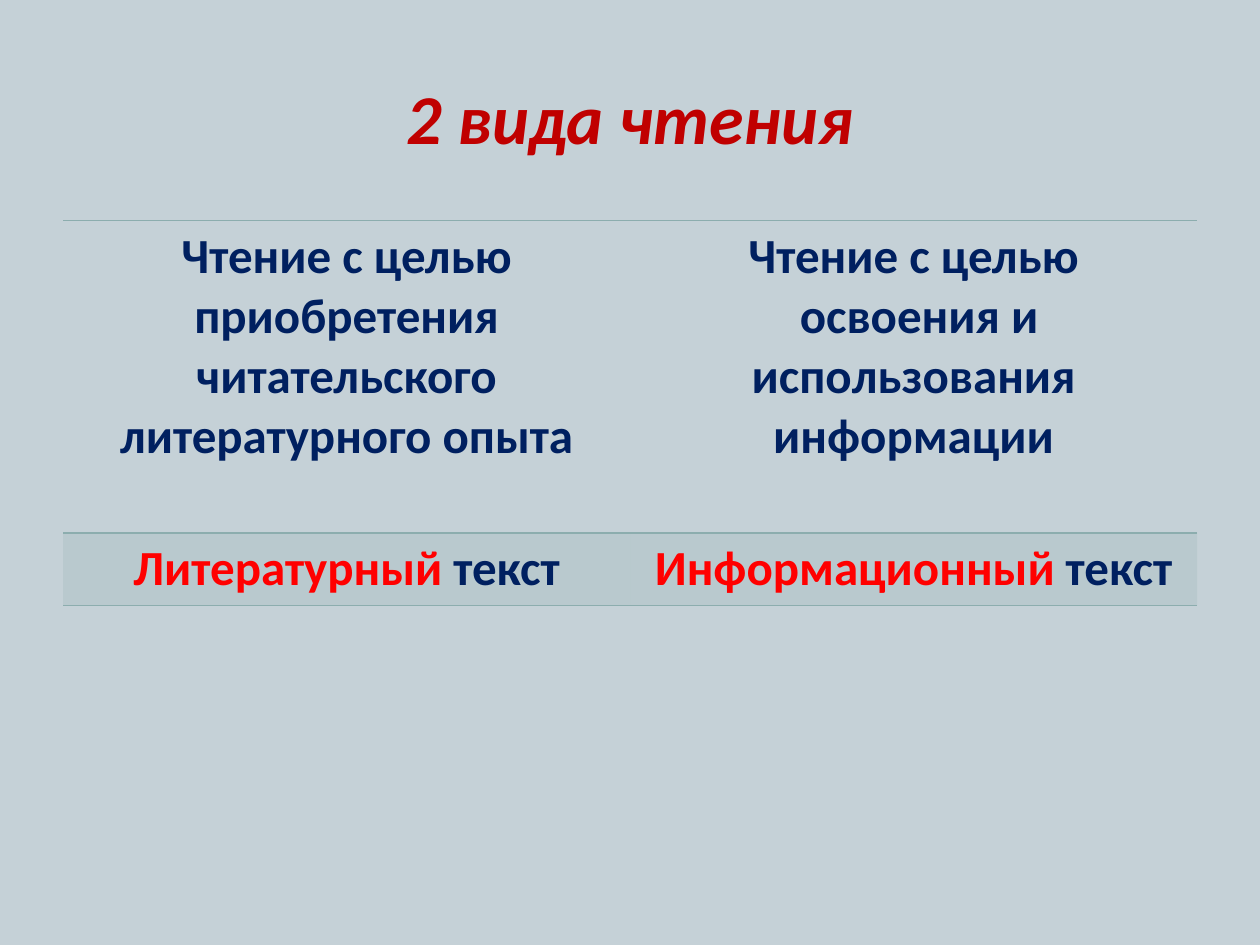
from dataclasses import dataclass

from lxml.etree import SubElement
from pptx import Presentation
from pptx.dml.color import RGBColor
from pptx.enum.text import MSO_ANCHOR, PP_ALIGN
from pptx.oxml.ns import qn
from pptx.util import Inches, Pt


@dataclass(frozen=True)
class Theme:
    font: str = "Calibri"
    background: str = "C5D1D7"
    title: str = "C00000"
    text: str = "002060"
    accent: str = "FF0000"
    rule: str = "8CADAE"
    title_size: int = 40
    table_size: int = 28
    band_opacity: int = 20
    rule_width: int = 1


THEME = Theme()
NO_TABLE_STYLE = "{2D5ABB26-0587-4C30-8999-92F81FD0307C}"

# Each cell is a list of paragraphs, each paragraph a list of (text, colour)
TABLE_ROWS = [
    [
        [[("Чтение с целью приобретения читательского литературного опыта", THEME.text)]],
        [[("Чтение с целью", THEME.text)],
         [(" освоения и использования информации", THEME.text)]],
    ],
    [
        [[("Литературный", THEME.accent), (" текст", THEME.text)]],
        [[("Информационный", THEME.accent), (" текст", THEME.text)]],
    ],
]
ROW_HEIGHTS = (2.48, 0.57)


def add_text(paragraph, text, *, size, color, bold=True, italic=False):
    paragraph.alignment = PP_ALIGN.CENTER
    run = paragraph.add_run()
    run.text = text
    font = run.font
    font.name = THEME.font
    font.size = Pt(size)
    font.bold = bold
    font.italic = italic
    font.color.rgb = RGBColor.from_string(color)


def add_title(slide, text):
    title = slide.shapes.title
    title.left, title.top = Inches(0.5), Inches(0.3)
    title.width, title.height = Inches(9), Inches(1.25)
    title.text_frame.vertical_anchor = MSO_ANCHOR.MIDDLE
    add_text(title.text_frame.paragraphs[0], text,
             size=THEME.title_size, color=THEME.title, italic=True)


def add_rule(cell, side):
    """Draw one border of a cell; side is lnT or lnB."""
    properties = cell._tc.get_or_add_tcPr()
    line = SubElement(properties, qn(f"a:{side}"), w=str(Pt(THEME.rule_width)))
    fill = SubElement(line, qn("a:solidFill"))
    SubElement(fill, qn("a:srgbClr"), val=THEME.rule)


def fill_band(cell):
    cell.fill.solid()
    cell.fill.fore_color.rgb = RGBColor.from_string(THEME.rule)
    color = cell._tc.tcPr.find(f"{qn('a:solidFill')}/{qn('a:srgbClr')}")
    SubElement(color, qn("a:alpha"), val=str(THEME.band_opacity * 1000))


def fill_cell(cell, paragraphs):
    frame = cell.text_frame
    for index, runs in enumerate(paragraphs):
        paragraph = frame.add_paragraph() if index else frame.paragraphs[0]
        for text, color in runs:
            add_text(paragraph, text, size=THEME.table_size, color=color)


def add_reading_table(slide):
    shape = slide.shapes.add_table(
        len(TABLE_ROWS), len(TABLE_ROWS[0]), Inches(0.5), Inches(1.75),
        Inches(9), Inches(sum(ROW_HEIGHTS)))
    table = shape.table
    table.first_row = table.horz_banding = False
    table._tbl.tblPr.find(qn("a:tableStyleId")).text = NO_TABLE_STYLE

    for row_index, (row, height) in enumerate(zip(TABLE_ROWS, ROW_HEIGHTS)):
        table.rows[row_index].height = Inches(height)
        for column_index, paragraphs in enumerate(row):
            cell = table.cell(row_index, column_index)
            fill_cell(cell, paragraphs)
            # Borders precede the fill in the cell properties
            add_rule(cell, "lnT")
            add_rule(cell, "lnB")
            if row_index:
                fill_band(cell)
            else:
                cell.fill.background()


def main():
    presentation = Presentation()
    presentation.slide_width, presentation.slide_height = Inches(10), Inches(7.5)
    slide = presentation.slides.add_slide(presentation.slide_layouts.get_by_name("Title Only"))

    # Background
    background = slide.background.fill
    background.solid()
    background.fore_color.rgb = RGBColor.from_string(THEME.background)

    # Content
    add_title(slide, "2 вида чтения")
    add_reading_table(slide)
    presentation.save("out.pptx")


if __name__ == "__main__":
    main()
